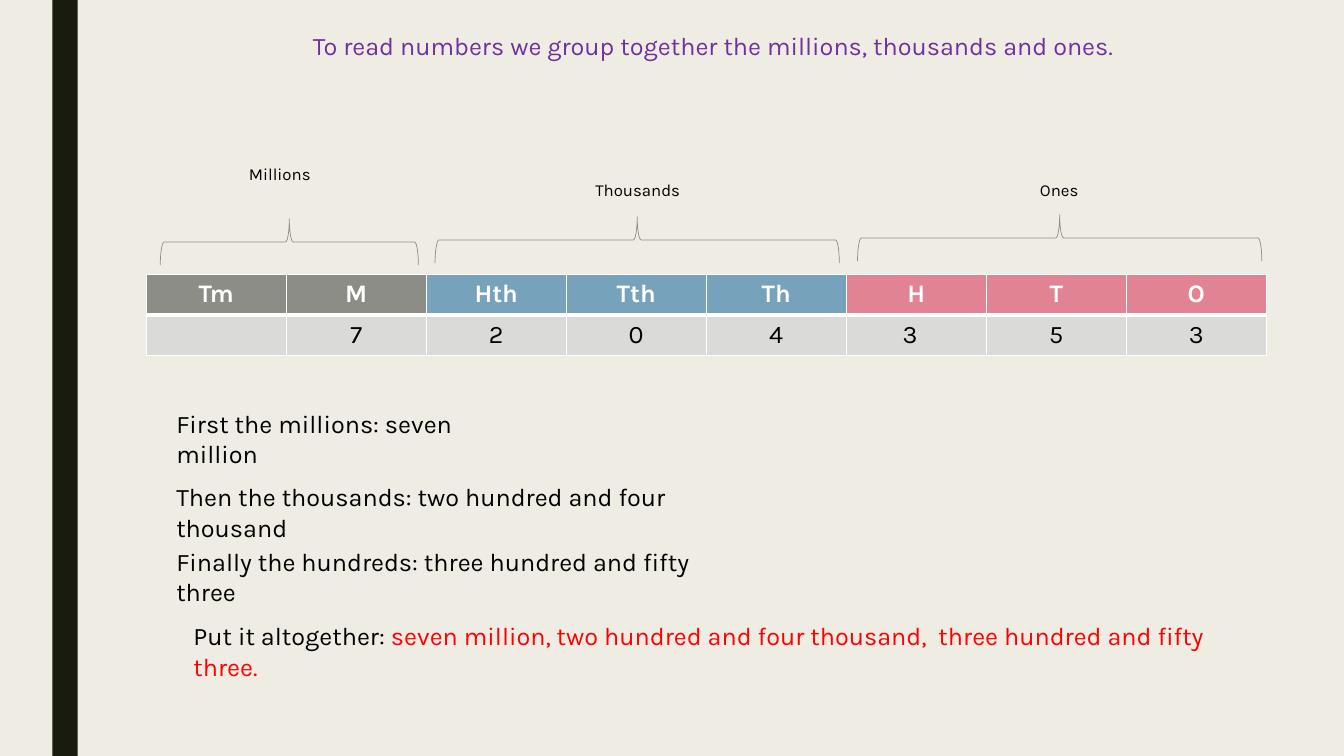
import pptx
import pptx.util
import pptx.dml.color
import pptx.enum.shapes
import pptx.enum.text
import pptx.oxml
import pptx.oxml.ns

Inches, Pt = pptx.util.Inches, pptx.util.Pt
SHAPES = pptx.enum.shapes.MSO_SHAPE
ALIGN = pptx.enum.text.PP_ALIGN
ANCHOR = pptx.enum.text.MSO_ANCHOR
COLORS = {
    "paper": "EFEDE3", "bar": "191B0E", "grey": "8C8D86", "blue": "77A2BB",
    "pink": "E28394", "digits": "DADBD9", "white": "FFFFFF", "black": "000000",
    "purple": "7030A0", "red": "FF0000",
}
RGB = {name: pptx.dml.color.RGBColor.from_string(code) for name, code in COLORS.items()}


def write(frame, runs, size=18, align=ALIGN.LEFT, bold=False):
    """Fill a text frame's first paragraph from (text, colour name) runs."""
    frame.word_wrap = True
    para = frame.paragraphs[0]
    para.alignment = align
    for text, color in runs:
        span = para.add_run()
        span.text = text
        span.font.name = "Karla"
        span.font.size = Pt(size)
        span.font.bold = bold
        span.font.color.rgb = RGB[color]


def set_border(cell, side, width):
    line = pptx.oxml.parse_xml(
        f'<a:ln{side} {pptx.oxml.ns.nsdecls("a")} w="{Pt(width)}"><a:solidFill>'
        f'<a:srgbClr val="{COLORS["white"]}"/></a:solidFill></a:ln{side}>')
    cell._tc.get_or_add_tcPr().append(line)


deck = pptx.Presentation()
deck.slide_width, deck.slide_height = Inches(13.33), Inches(7.5)
page = deck.slides.add_slide(deck.slide_layouts[5])
page.background.fill.solid()
page.background.fill.fore_color.rgb = RGB["paper"]

bar = page.shapes.add_shape(SHAPES.RECTANGLE, Inches(0.52), 0, Inches(0.25), deck.slide_height)
bar.shadow.inherit = False
bar.fill.solid()
bar.fill.fore_color.rgb = RGB["bar"]
bar.line.fill.background()

title = page.shapes.title
title.left, title.top = Inches(2.05), Inches(0.25)
title.width, title.height = Inches(10.05), Inches(0.4)
title.text_frame.auto_size = pptx.enum.text.MSO_AUTO_SIZE.NONE
title.text_frame.vertical_anchor = ANCHOR.TOP
write(title.text_frame,
      [("To read numbers we group together the millions, thousands and ones.", "purple")],
      align=ALIGN.CENTER)

# Place-value table
headings = ["Tm", "M", "Hth", "Tth", "Th", "H", "T", "O"]
digits = ["", "7", "2", "0", "4", "3", "5", "3"]
heading_fills = ["grey"] * 2 + ["blue"] * 3 + ["pink"] * 3
table = page.shapes.add_table(2, len(headings), Inches(1.45), Inches(2.72),
                              Inches(11.11), Inches(0.81)).table
for r, texts in enumerate([headings, digits]):
    is_heading = r == 0
    for c, text in enumerate(texts):
        cell = table.cell(r, c)
        for side in "LRTB":
            on_rule = side == ("B" if is_heading else "T")
            set_border(cell, side, 3 if on_rule else 1)
        cell.fill.solid()
        cell.fill.fore_color.rgb = RGB[heading_fills[c] if is_heading else "digits"]
        cell.vertical_anchor = ANCHOR.MIDDLE
        if text:
            write(cell.text_frame, [(text, "white" if is_heading else "black")],
                  align=ALIGN.CENTER, bold=is_heading)
table.cell(1, headings.index("H")).margin_right = Inches(0.22)

# Braces: name, label left and top, brace centre x and y, brace span
brace_depth = 0.46
groups = [
    ("Millions", 1.65, 1.58, 2.87, 2.4, 2.56),
    ("Thousands", 5.2, 1.73, 6.32, 2.38, 4.01),
    ("Ones", 9.38, 1.73, 10.51, 2.36, 4.01),
]
for name, label_left, label_top, center_x, center_y, span_width in groups:
    brace = page.shapes.add_shape(
        SHAPES.RIGHT_BRACE, Inches(center_x - brace_depth / 2),
        Inches(center_y - span_width / 2), Inches(brace_depth), Inches(span_width))
    brace.rotation = 270
    brace.shadow.inherit = False
    brace.fill.background()
    brace.line.color.rgb = RGB["grey"]
    brace.line.width = Pt(0.5)
    label = page.shapes.add_textbox(Inches(label_left), Inches(label_top), Inches(2.25), Inches(0.3))
    write(label.text_frame, [(name, "black")], size=12, align=ALIGN.CENTER)

# Reading steps: left, top, width, runs
steps = [
    (1.65, 4, 3.62, [("First the millions: seven million", "black")]),
    (1.65, 4.73, 6.18, [("Then the thousands: two hundred and four thousand", "black")]),
    (1.65, 5.37, 5.78, [("Finally the hundreds: three hundred and fifty three", "black")]),
    (1.82, 6.11, 10.86, [
        ("Put it altogether: ", "black"),
        ("seven million, two hundred and four thousand,  three hundred and fifty three.", "red")]),
]
for left, top, width, runs in steps:
    box = page.shapes.add_textbox(Inches(left), Inches(top), Inches(width), Inches(0.4))
    write(box.text_frame, runs)

deck.save("out.pptx")
